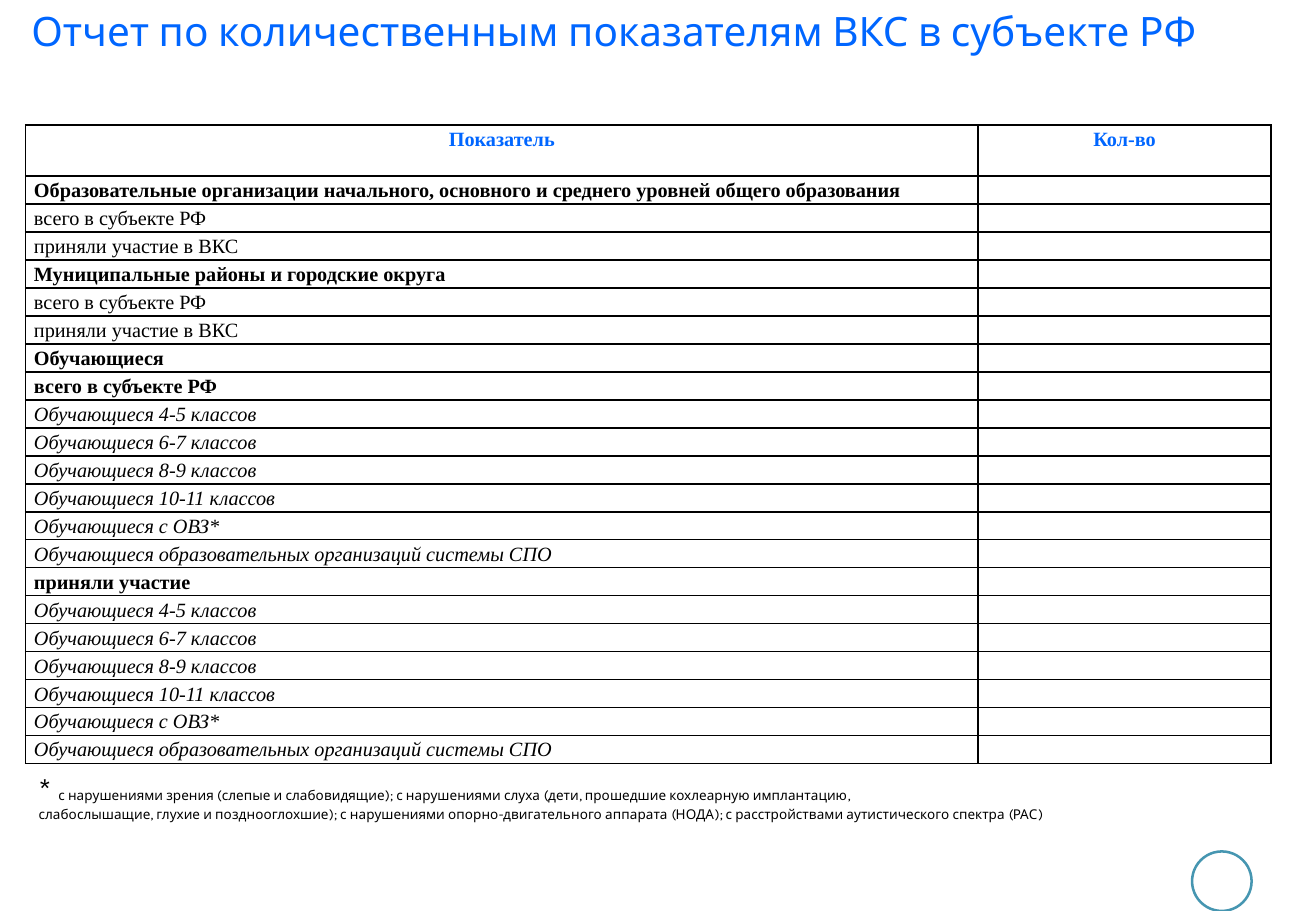
from dataclasses import dataclass

from lxml.etree import SubElement
from pptx import Presentation
from pptx.dml.color import RGBColor
from pptx.enum.shapes import MSO_SHAPE
from pptx.enum.text import PP_ALIGN
from pptx.oxml.ns import qn
from pptx.util import Inches, Pt


@dataclass(frozen=True)
class Theme:
    accent: RGBColor = RGBColor(0x00, 0x66, 0xFF)
    ink: RGBColor = RGBColor(0, 0, 0)
    paper: RGBColor = RGBColor(0xFF, 0xFF, 0xFF)
    ring: RGBColor = RGBColor(0x46, 0x96, 0xB1)
    display_font: str = "Karla"
    table_font: str = "Times New Roman"
    title_size: int = 24
    table_size: int = 12
    asterisk_size: int = 18
    note_size: int = 8


THEME = Theme()

TITLE = "Отчет по количественным показателям ВКС в субъекте РФ"
HEADERS = ["Показатель", "Кол-во"]
BOLD, PLAIN, ITALIC = "bold", "plain", "italic"
PARTICIPATION = [("всего в субъекте РФ", PLAIN), ("приняли участие в ВКС", PLAIN)]
STUDENT_GROUPS = [
    ("Обучающиеся 4-5 классов", ITALIC),
    ("Обучающиеся 6-7 классов", ITALIC),
    ("Обучающиеся 8-9 классов", ITALIC),
    ("Обучающиеся 10-11 классов", ITALIC),
    ("Обучающиеся с ОВЗ*", ITALIC),
    ("Обучающиеся образовательных организаций системы СПО", ITALIC),
]
INDICATORS = [
    ("Образовательные организации начального, основного и среднего "
     "уровней общего образования", BOLD),
    *PARTICIPATION,
    ("Муниципальные районы и городские округа", BOLD),
    *PARTICIPATION,
    ("Обучающиеся", BOLD),
    ("всего в субъекте РФ", BOLD),
    *STUDENT_GROUPS,
    ("приняли участие", BOLD),
    *STUDENT_GROUPS,
]
NOTE_LINES = [
    "с нарушениями зрения (слепые и слабовидящие); с нарушениями слуха "
    "(дети, прошедшие кохлеарную имплантацию,",
    "слабослышащие, глухие и позднооглохшие); с нарушениями "
    "опорно-двигательного аппарата (НОДА); с расстройствами "
    "аутистического спектра (РАС)",
]

HEADER_HEIGHT, ROW_HEIGHT = 0.42, 0.23
COUNT_WIDTH = 2.41


def set_font(font, name, size, color):
    font.name = name
    font.size = Pt(size)
    font.color.rgb = color


def add_text_frame(slide, left, top, width, height):
    frame = slide.shapes.add_textbox(
        Inches(left), Inches(top), Inches(width), Inches(height)).text_frame
    frame.word_wrap = True
    return frame


def add_page_ring(slide, left, top, size):
    ring = slide.shapes.add_shape(
        MSO_SHAPE.OVAL, Inches(left), Inches(top), Inches(size), Inches(size))
    ring.shadow.inherit = False
    ring.fill.solid()
    ring.fill.fore_color.rgb = THEME.paper
    ring.line.color.rgb = THEME.ring
    ring.line.width = Pt(1.5)


def add_title(slide, left, top, width, height):
    heading = add_text_frame(slide, left, top, width, height).paragraphs[0]
    heading.text = TITLE
    set_font(heading.font, THEME.display_font, THEME.title_size, THEME.accent)


def add_borders(cell):
    """Draw all four cell edges; they must precede the cell's fill."""
    properties = cell._tc.get_or_add_tcPr()
    for edge in ("a:lnL", "a:lnR", "a:lnT", "a:lnB"):
        border = SubElement(properties, qn(edge), w=str(Pt(1)))
        fill = SubElement(border, qn("a:solidFill"))
        SubElement(fill, qn("a:srgbClr"), val=str(THEME.ink))


def fill_cell(cell, text, style, color, alignment=PP_ALIGN.LEFT):
    cell.margin_left = cell.margin_right = Inches(0.07)
    cell.margin_top = cell.margin_bottom = 0
    add_borders(cell)
    cell.fill.background()
    entry = cell.text_frame.paragraphs[0]
    entry.text = text
    entry.alignment = alignment
    entry.line_spacing = 1.15
    set_font(entry.font, THEME.table_font, THEME.table_size, color)
    entry.font.bold = style == BOLD
    entry.font.italic = style == ITALIC
    if not text:  # keeps an empty row from growing to the default type size
        SubElement(entry._p, qn("a:endParaRPr"), sz=str(THEME.table_size * 100))


def add_indicator_table(slide, left, top, width):
    height = HEADER_HEIGHT + ROW_HEIGHT * len(INDICATORS)
    table = slide.shapes.add_table(
        len(INDICATORS) + 1, len(HEADERS),
        Inches(left), Inches(top), Inches(width), Inches(height)).table
    table.first_row = table.horz_banding = False
    table.columns[0].width = Inches(width - COUNT_WIDTH)
    table.columns[1].width = Inches(COUNT_WIDTH)
    for index, row in enumerate(table.rows):
        row.height = Inches(ROW_HEIGHT if index else HEADER_HEIGHT)

    for column, header in enumerate(HEADERS):
        fill_cell(table.cell(0, column), header, BOLD, THEME.accent, PP_ALIGN.CENTER)
    for index, (indicator, style) in enumerate(INDICATORS, start=1):
        fill_cell(table.cell(index, 0), indicator, style, THEME.ink)
        fill_cell(table.cell(index, 1), "", PLAIN, THEME.ink)


def add_footnote(slide, left, top, width, height):
    frame = add_text_frame(slide, left, top, width, height)
    first, second = frame.paragraphs[0], frame.add_paragraph()
    for text, size in (("* ", THEME.asterisk_size), (NOTE_LINES[0], THEME.note_size)):
        run = first.add_run()
        run.text = text
        set_font(run.font, THEME.display_font, size, THEME.ink)
    second.text = NOTE_LINES[1]
    set_font(second.font, THEME.display_font, THEME.note_size, THEME.ink)


def main():
    presentation = Presentation()
    presentation.slide_width = Inches(10.83)
    presentation.slide_height = Inches(7.5)
    slide = presentation.slides.add_slide(presentation.slide_layouts[6])
    add_page_ring(slide, 9.81, 7.01, 0.49)
    add_title(slide, 0.16, 0, 10.34, 0.5)
    add_indicator_table(slide, 0.21, 1.03, 10.25)
    add_footnote(slide, 0.22, 6.29, 10.23, 0.84)
    presentation.save("out.pptx")


if __name__ == "__main__":
    main()
